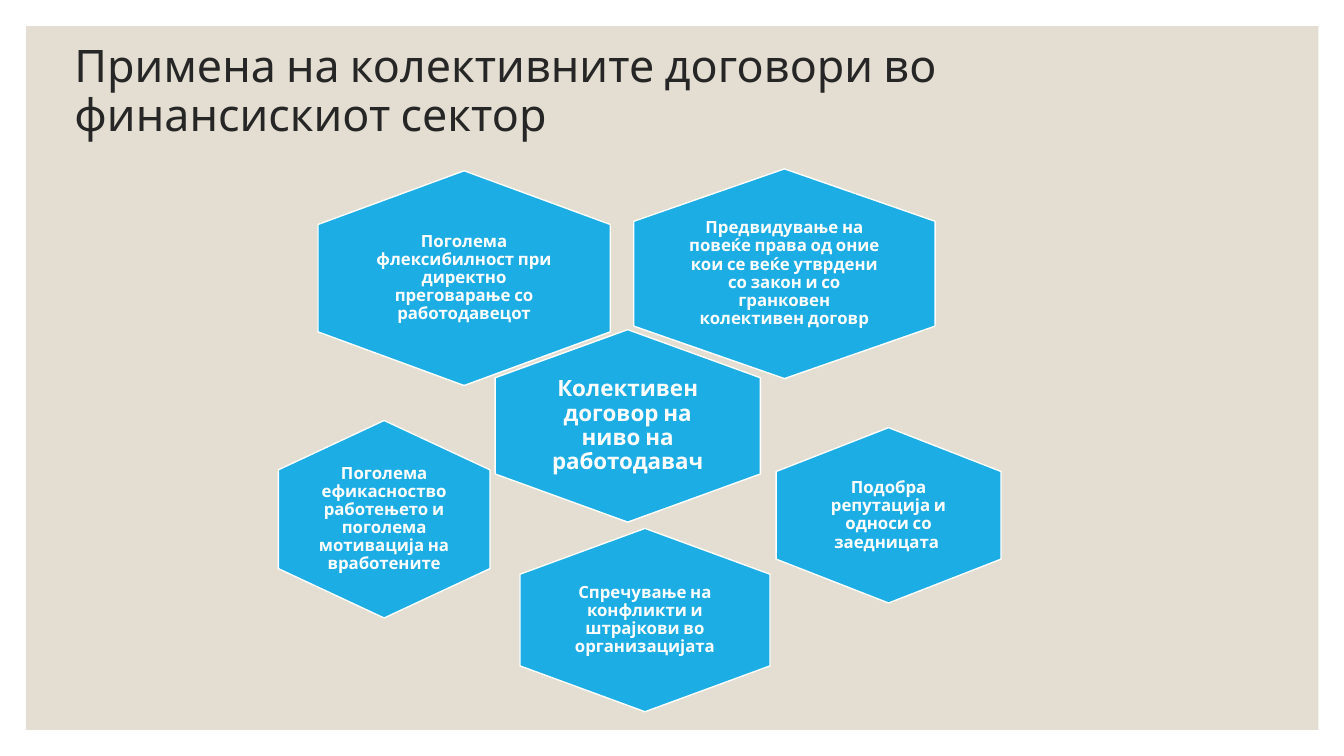
"""Build the slide on applying collective agreements in the financial sector."""
from dataclasses import dataclass

from pptx import Presentation
from pptx.dml.color import RGBColor
from pptx.enum.shapes import MSO_SHAPE as SHAPE
from pptx.enum.text import MSO_ANCHOR as ANCHOR, PP_ALIGN as ALIGN
from pptx.slide import Slide
from pptx.util import Pt

WHITE = RGBColor(0xFF, 0xFF, 0xFF)
SAND = RGBColor(0xE3, 0xDE, 0xD1)
BLUE = RGBColor(0x1C, 0xAD, 0xE4)
DARK = RGBColor(0x26, 0x26, 0x26)
FONT = "Cabin"
TEXT_SHARE = 2 / 3
TITLE = "Примена на колективните договори во финансискиот сектор"


@dataclass
class Hexagon:
    text: str
    cx: float
    cy: float
    width: float
    height: float
    inset: float = 0
    size: float = 12


HEXAGONS = [
    Hexagon("Предвидување на повеќе права од оние кои се веќе утврдени "
            "со закон и со гранковен колективен договр",
            560.3, 195.5, 215.3, 149.8, inset=3.6),
    Hexagon("Поголема флексибилност при директно преговарање со работодавецот",
            331.5, 198.7, 208.8, 153.4),
    Hexagon("Колективен договор на ниво на работодавач",
            448.4, 304.2, 189.4, 137.5, inset=5, size=16),
    Hexagon("Подобра репутација и односи со заедницата ",
            634.7, 368.1, 160.6, 125.3),
    Hexagon("Спречување на конфликти и штрајкови во организацијата",
            460.7, 442.9, 178.6, 131, inset=3.6),
    Hexagon("Поголема ефикасноство работењето и поголема мотивација "
            "на вработените",
            274.4, 370.9, 151.2, 141.1),
]


def add_text(s: Slide, text: str, left: float, top: float, width: float,
             height: float, size: float, color: RGBColor, align: ALIGN,
             bold: bool, inset_x: float, inset_y: float) -> None:
    tf = s.shapes.add_textbox(Pt(left), Pt(top), Pt(width), Pt(height)).text_frame
    tf.word_wrap = True
    tf.vertical_anchor = ANCHOR.MIDDLE
    tf.margin_left = tf.margin_right = Pt(inset_x)
    tf.margin_top = tf.margin_bottom = Pt(inset_y)
    tf.text = text
    p = tf.paragraphs[0]
    p.alignment = align
    p.line_spacing = 0.9
    font = p.runs[0].font
    font.name, font.size, font.bold = FONT, Pt(size), bold
    font.color.rgb = color


def add_hexagon(s: Slide, h: Hexagon) -> None:
    sp = s.shapes.add_shape(SHAPE.HEXAGON, Pt(h.cx - h.height / 2),
                            Pt(h.cy - h.width / 2), Pt(h.height), Pt(h.width))
    sp.rotation = 90
    sp.shadow.inherit = False
    sp.fill.solid()
    sp.fill.fore_color.rgb = BLUE
    sp.line.color.rgb = WHITE
    sp.line.width = Pt(1)
    width, height = h.width * TEXT_SHARE, h.height * TEXT_SHARE
    add_text(s, h.text, h.cx - width / 2, h.cy - height / 2, width, height,
             h.size, WHITE, ALIGN.CENTER, True, h.inset, h.inset)


def main() -> None:
    prs = Presentation()
    prs.slide_width, prs.slide_height = Pt(960), Pt(540)
    s = prs.slides.add_slide(prs.slide_layouts[6])
    panel = s.shapes.add_shape(SHAPE.RECTANGLE, Pt(18.7), Pt(18.7), Pt(923), Pt(502.6))
    panel.shadow.inherit = False
    panel.fill.solid()
    panel.fill.fore_color.rgb = SAND
    panel.line.fill.background()
    add_text(s, TITLE, 46.1, 12.2, 792, 108, 32, DARK, ALIGN.LEFT, False, 7.2, 3.6)
    for hexagon in HEXAGONS:
        add_hexagon(s, hexagon)
    prs.save("out.pptx")


if __name__ == "__main__":
    main()
